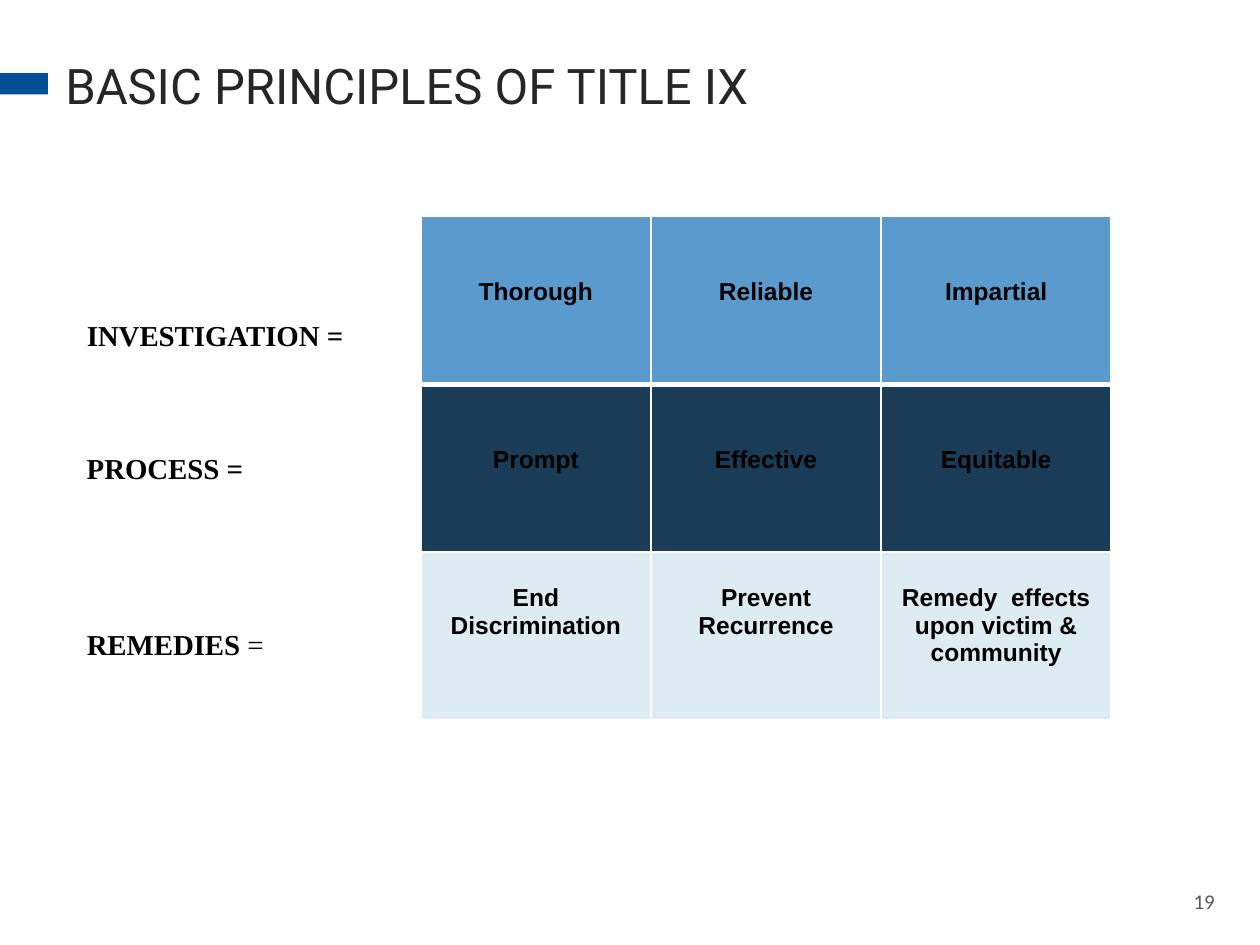
import pptx
import pptx.dml.color
import pptx.enum.shapes
import pptx.enum.text
import pptx.oxml
import pptx.oxml.ns
import pptx.util

Inches = pptx.util.Inches
ALIGN = pptx.enum.text.PP_ALIGN
ANCHOR = pptx.enum.text.MSO_ANCHOR

ROWS = [
    ("5A9ACD", 0.49, 3, ["Thorough", "Reliable", "Impartial"]),
    ("1A3C57", 0.49, 1, ["Prompt", "Effective", "Equitable"]),
    ("DDEBF2", 0.26, 1, ["End Discrimination", "Prevent Recurrence",
                         "Remedy  effects upon victim & community"]),
]
LABELS = [
    ("INVESTIGATION", True, 2.47, 2.75),
    ("PROCESS", True, 3.53, 2.06),
    ("REMEDIES", False, 4.92, 2.19),
]


def color(code):
    return pptx.dml.color.RGBColor.from_string(code)


def style(run, size, face, code, bold=False):
    font = run.font
    font.size = pptx.util.Pt(size)
    font.name = face
    font.bold = bold
    font.color.rgb = color(code)


def add_box(slide, left, top, width, height, anchor=ANCHOR.TOP):
    box = slide.shapes.add_textbox(Inches(left), Inches(top), Inches(width), Inches(height))
    frame = box.text_frame
    frame.word_wrap = True
    frame.vertical_anchor = anchor
    return frame


def add_line(frame, text, size, face, code, align=ALIGN.LEFT):
    frame.text = text
    line = frame.paragraphs[0]
    line.alignment = align
    style(line.runs[0], size, face, code)


def add_label(slide, word, bold, top, width):
    line = add_box(slide, 0.59, top, width, 0.38).paragraphs[0]
    for text, heavy in [(word + " ", True), ("=", bold)]:
        run = line.add_run()
        run.text = text
        style(run, 16.5, "Times New Roman", "000000", heavy)


def add_bar(slide):
    bar = slide.shapes.add_shape(pptx.enum.shapes.MSO_SHAPE.RECTANGLE,
                                 Inches(-0.01), Inches(0.58), Inches(0.39), Inches(0.17))
    bar.shadow.inherit = False
    bar.fill.solid()
    bar.fill.fore_color.rgb = color("004E93")
    bar.line.fill.background()


def set_edges(cell, top, base):
    props = cell._tc.get_or_add_tcPr()
    edges = [("L", 1), ("R", 1), ("T", top), ("B", base)]
    for index, (side, width) in enumerate(edges):
        edge = pptx.oxml.parse_xml(
            f'<a:ln{side} {pptx.oxml.ns.nsdecls("a")} w="{pptx.util.Pt(width)}">'
            f'<a:solidFill><a:srgbClr val="FFFFFF"/></a:solidFill></a:ln{side}>')
        props.insert(index, edge)


def fill_cell(cell, text, fill, inset):
    cell.fill.solid()
    cell.fill.fore_color.rgb = color(fill)
    cell.margin_left = cell.margin_right = Inches(0.07)
    cell.margin_top = Inches(inset)
    cell.margin_bottom = Inches(0.04)
    cell.text_frame.text = text
    line = cell.text_frame.paragraphs[0]
    line.alignment = ALIGN.CENTER
    style(line.runs[0], 14, "Arial", "000000", True)


def add_grid(slide):
    count = len(ROWS)
    frame = slide.shapes.add_table(count, 3, Inches(3.34), Inches(1.72),
                                   Inches(5.48), Inches(3.99))
    table = frame.table
    table.first_row = False
    table.horz_banding = False
    above = 1
    for row, (fill, inset, base, words) in enumerate(ROWS):
        for col, word in enumerate(words):
            cell = table.cell(row, col)
            fill_cell(cell, word, fill, inset)
            set_edges(cell, above, base)
        above = base


def main():
    deck = pptx.Presentation()
    deck.slide_width = Inches(10)
    deck.slide_height = Inches(7.5)
    slide = deck.slides.add_slide(deck.slide_layouts[6])
    add_bar(slide)
    add_line(add_box(slide, 9.26, 7, 0.48, 0.3), "19", 12, "Calibri", "595959", ALIGN.RIGHT)
    add_line(add_box(slide, 0.42, -0.04, 10.5, 1.43, ANCHOR.MIDDLE),
             "BASIC PRINCIPLES OF TITLE IX", 28, "Roboto", "262626")
    add_grid(slide)
    for label in LABELS:
        add_label(slide, *label)
    deck.save("out.pptx")


if __name__ == "__main__":
    main()
